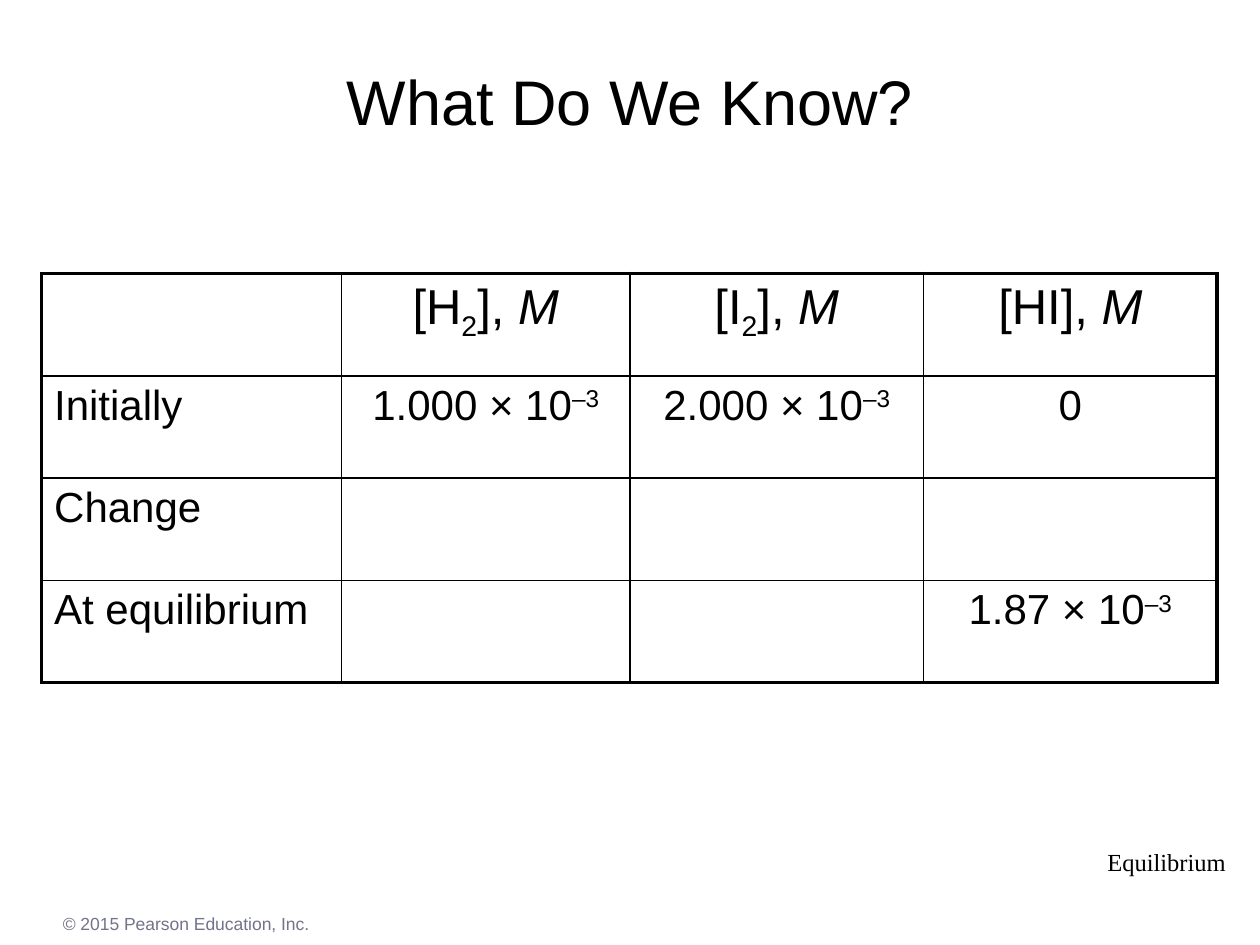
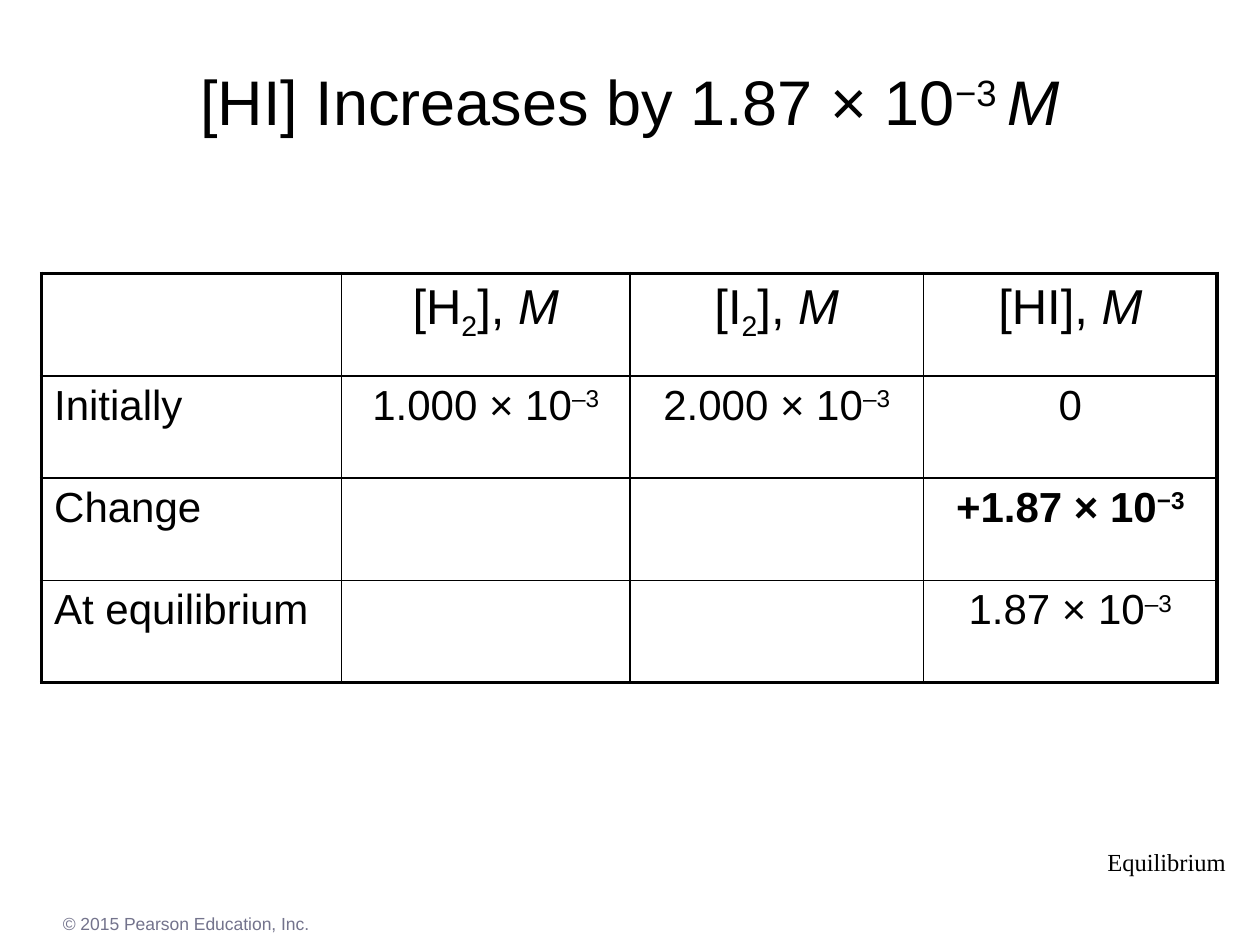
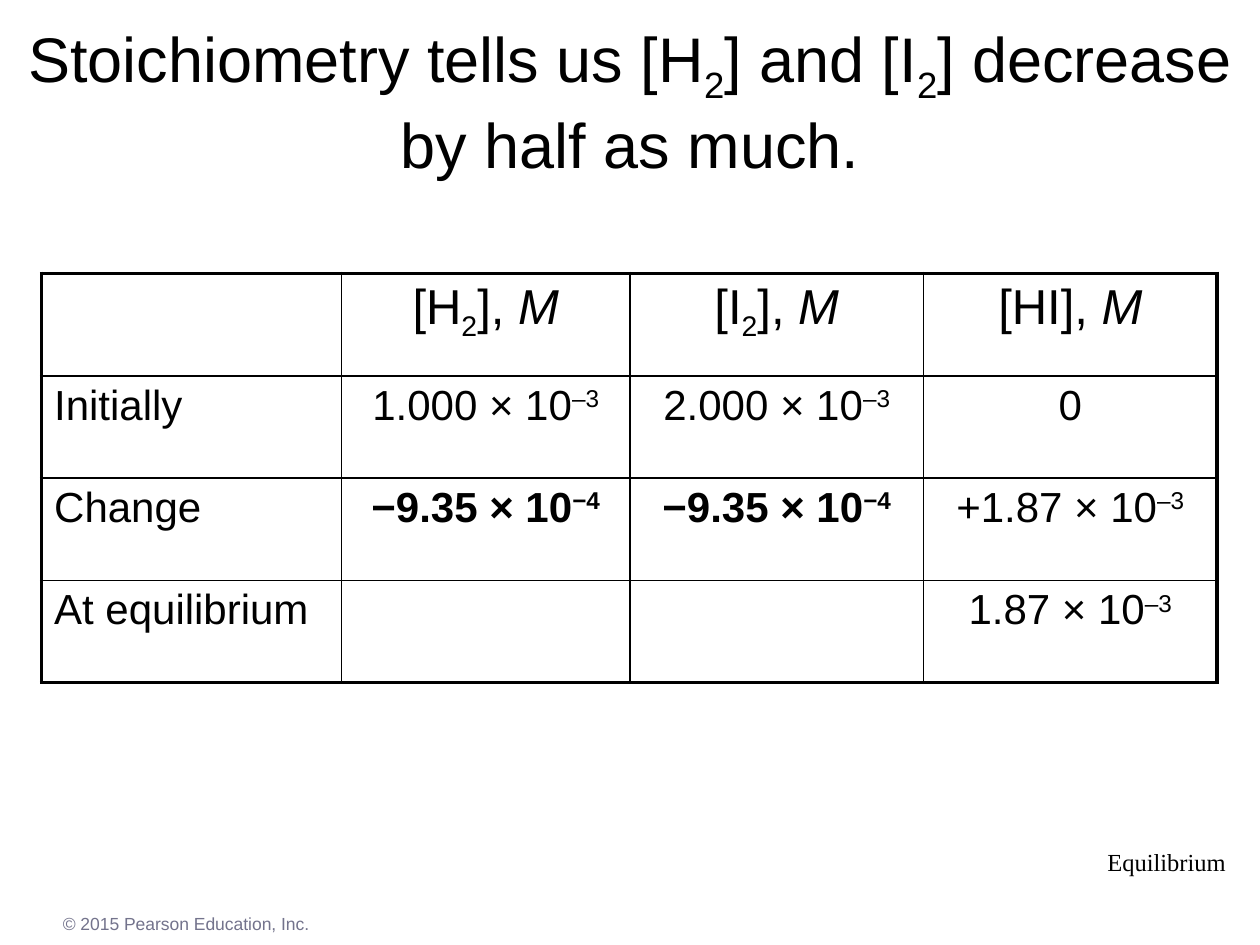
"""Build three slides that fill in an equilibrium table step by step."""
from typing import NamedTuple

from lxml import etree
from pptx import Presentation
from pptx.dml.color import RGBColor
from pptx.enum.text import MSO_ANCHOR, MSO_AUTO_SIZE, PP_ALIGN
from pptx.oxml.ns import qn
from pptx.util import Inches, Pt

LEFT, CENTER = PP_ALIGN.LEFT, PP_ALIGN.CENTER
MIDDLE = MSO_ANCHOR.MIDDLE
FIXED, GROW = MSO_AUTO_SIZE.NONE, MSO_AUTO_SIZE.SHAPE_TO_FIT_TEXT

COLORS = {"ink": "000000", "muted": "73738C"}
SANS, SERIF = "Arial", "Times New Roman"
WIDTHS = (2.38, 2.29, 2.33, 2.33)
HIGH = 3.25
THICK, THIN = 2.25, 1


class Run(NamedTuple):
    text: str
    base: int = 0
    slant: bool = False


class Line(NamedTuple):
    runs: tuple[Run, ...] = ()
    bold: bool = False


class Style(NamedTuple):
    size: int
    face: str = SANS
    color: str = "ink"
    align: PP_ALIGN = LEFT


class Label(NamedTuple):
    text: str
    box: tuple[float, float, float, float]
    style: Style
    wrap: bool


class Page(NamedTuple):
    title: Line
    change: tuple[Line, Line, Line]


def plain(text: str) -> Line:
    return Line((Run(text),))


def power(text: str, exp: str, bold: bool = False) -> Line:
    return Line((Run(f"{text} × 10"), Run(exp, 30)), bold)


TWO, MOLAR = Run("2", -25), Run("M", slant=True)
BLANK = Line()
TITLE = Style(36, align=CENTER)
HEAD = Style(28, align=CENTER)
NAME = Style(24)
VALUE = Style(24, align=CENTER)

LABELS = (
    Label("Equilibrium", (8.69, 6.67, 1.14, 0.33), Style(14, SERIF), False),
    Label("© 2015 Pearson Education, Inc.", (0.4, 7.2, 9, 0.27),
          Style(10, color="muted"), True),
)
HEADS = (
    BLANK,
    Line((Run("[H"), TWO, Run("], "), MOLAR)),
    Line((Run("[I"), TWO, Run("], "), MOLAR)),
    Line((Run("[HI], "), MOLAR)),
)
START = (plain("Initially"), power("1.000", "–3"), power("2.000", "–3"), plain("0"))
FINAL = (plain("At equilibrium"), BLANK, BLANK, power("1.87", "–3"))
LOSS = power("−9.35", "−4", True)

PAGES = (
    Page(plain("What Do We Know?"), (BLANK, BLANK, BLANK)),
    Page(Line((Run("[HI] Increases by 1.87 × 10"), Run("−3 ", 30), MOLAR)),
         (BLANK, BLANK, power("+1.87", "−3", True))),
    Page(Line((Run("Stoichiometry tells us [H"), TWO, Run("] and [I"), TWO,
               Run("] decrease by half as much."))),
         (LOSS, LOSS, power("+1.87", "–3"))),
)


def write(frame, line: Line, style: Style) -> None:
    para = frame.paragraphs[0]
    para.alignment = style.align
    font = para.font
    font.size, font.name, font.bold = Pt(style.size), style.face, line.bold
    font.color.rgb = RGBColor.from_string(COLORS[style.color])
    for part in line.runs:
        run = para.add_run()
        run.text = part.text
        if part.slant:
            run.font.italic = True
        if part.base:
            run._r.get_or_add_rPr().set("baseline", str(part.base * 1000))


def place(shape, box: tuple[float, float, float, float]) -> None:
    shape.left, shape.top, shape.width, shape.height = map(Inches, box)


def border(cell, side: str, width: float) -> None:
    edge = etree.SubElement(cell._tc.get_or_add_tcPr(), qn(f"a:ln{side}"),
                            w=str(Pt(width)))
    fill = etree.SubElement(edge, qn("a:solidFill"))
    etree.SubElement(fill, qn("a:srgbClr"), val=COLORS["ink"])


def add_label(slide, label: Label) -> None:
    box = slide.shapes.add_textbox(*map(Inches, label.box))
    frame = box.text_frame
    frame.word_wrap, frame.auto_size = label.wrap, GROW
    write(frame, plain(label.text), label.style)


def add_grid(slide, rows: tuple[tuple[Line, ...], ...]) -> None:
    tall, wide = len(rows), len(WIDTHS)
    grid = slide.shapes.add_table(tall, wide, Inches(0.33), Inches(2.17),
                                  Inches(sum(WIDTHS)), Inches(HIGH)).table
    grid.first_row = grid.horz_banding = False
    for col, width in zip(grid.columns, WIDTHS):
        col.width = Inches(width)
    for r, row in enumerate(rows):
        for c, line in enumerate(row):
            cell = grid.cell(r, c)
            outer = {"L": c == 0, "R": c == wide - 1,
                     "T": r == 0, "B": r == tall - 1}
            for side, edge in outer.items():
                border(cell, side, THICK if edge else THIN)
            cell.fill.background()
            style = HEAD if r == 0 else VALUE if c else NAME
            write(cell.text_frame, line, style)


def add_page(deck, page: Page) -> None:
    slide = deck.slides.add_slide(deck.slide_layouts[5])
    for label in LABELS:
        add_label(slide, label)
    title = slide.shapes.title
    place(title, (0, 0.17, 10, 1.25))
    frame = title.text_frame
    frame.word_wrap, frame.auto_size = True, FIXED
    frame.vertical_anchor = MIDDLE
    write(frame, page.title, TITLE)
    add_grid(slide, (HEADS, START, (plain("Change"), *page.change), FINAL))


def main() -> None:
    deck = Presentation()
    deck.slide_width, deck.slide_height = Inches(10), Inches(7.5)
    for page in PAGES:
        add_page(deck, page)
    deck.save("out.pptx")


if __name__ == "__main__":
    main()
